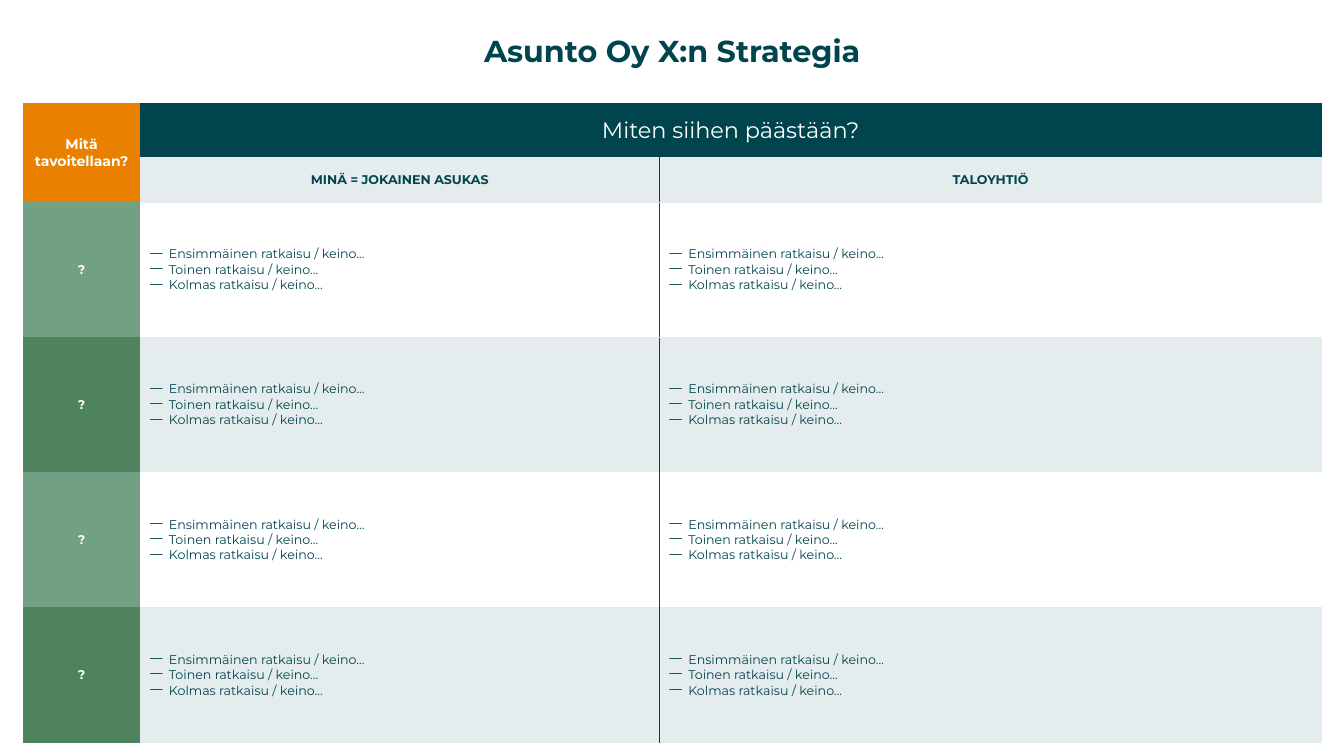
"""Build the housing company strategy slide with its goals and means table."""
from lxml.etree import SubElement
from pptx import Presentation
from pptx.dml.color import RGBColor
from pptx.enum.text import MSO_ANCHOR as Anchor, PP_ALIGN as Align
from pptx.oxml.ns import qn
from pptx.util import Pt

COLORS = {
    "petrol": "00454D",
    "orange": "E98000",
    "mist": "E5ECED",
    "white": "FFFFFF",
    "sage": "71A082",
    "forest": "4E835E",
}
MEANS = [
    "Ensimmäinen ratkaisu / keino…",
    "Toinen ratkaisu / keino…",
    "Kolmas ratkaisu / keino…",
]
COLUMN_WIDTHS = [83.5, 371, 473]
ROW_HEIGHTS = [39, 32] + [96.5] * 4
NO_GRID_STYLE = "{2D5ABB26-0587-4C30-8999-92F81FD0307C}"


def write(paragraph, text, size, color, bold=False):
    run = paragraph.add_run()
    run.text = text
    font_format = {"name": "Montserrat", "size": Pt(size), "bold": bold}
    for name, value in font_format.items():
        setattr(run.font, name, value)
    run.font.color.rgb = RGBColor.from_string(COLORS[color])


def style_cell(cell, fill, borders):
    properties = cell._tc.get_or_add_tcPr()
    for side in "LRTB":
        if side in borders:
            color, width = borders[side]
            line = SubElement(properties, qn(f"a:ln{side}"), w=str(Pt(width)))
            solid = SubElement(line, qn("a:solidFill"))
            SubElement(solid, qn("a:srgbClr"), val=COLORS[color])
    cell.fill.solid()
    cell.fill.fore_color.rgb = RGBColor.from_string(COLORS[fill])
    cell.vertical_anchor = Anchor.MIDDLE


presentation = Presentation()
presentation.slide_width = Pt(960)
presentation.slide_height = Pt(540)
slide = presentation.slides.add_slide(presentation.slide_layouts[5])

title = slide.shapes.title
title_box = {"left": 16.5, "top": 24.5, "width": 927.5, "height": 26.5}
for name, value in title_box.items():
    setattr(title, name, Pt(value))
title_format = {
    "margin_left": 0,
    "margin_right": 0,
    "margin_top": 0,
    "margin_bottom": 0,
    "vertical_anchor": Anchor.MIDDLE,
    "word_wrap": True,
}
for name, value in title_format.items():
    setattr(title.text_frame, name, value)
heading = title.text_frame.paragraphs[0]
heading.alignment = Align.CENTER
heading.line_spacing = 0.9
write(heading, "Asunto Oy X:n Strategia", 21.6, "petrol", True)

frame = slide.shapes.add_table(
    len(ROW_HEIGHTS), len(COLUMN_WIDTHS),
    Pt(16.5), Pt(73.5), Pt(sum(COLUMN_WIDTHS)), Pt(sum(ROW_HEIGHTS)),
)
table = frame.table
table.first_row = False
table.horz_banding = False
table._tbl.tblPr.find(qn("a:tableStyleId")).text = NO_GRID_STYLE
for column, width in zip(table.columns, COLUMN_WIDTHS):
    column.width = Pt(width)
for row, height in zip(table.rows, ROW_HEIGHTS):
    row.height = Pt(height)
table.cell(0, 0).merge(table.cell(1, 0))
table.cell(0, 1).merge(table.cell(0, 2))

divider = ("petrol", 0.5)
rule = ("mist", 0.75)
headers = [
    (0, 0, "Mitä tavoitellaan?", 10, "white", True, "orange", {}),
    (0, 1, "Miten siihen päästään?", 16, "white", False, "petrol", {"B": rule}),
    (1, 1, "MINÄ = JOKAINEN ASUKAS", 9, "petrol", True, "mist",
     {"R": divider, "T": rule, "B": rule}),
    (1, 2, "TALOYHTIÖ", 9, "petrol", True, "mist",
     {"L": divider, "T": rule, "B": rule}),
]
goals = [
    (row, 0, "?", 9, "white", True, "forest" if row % 2 else "sage", {})
    for row in range(2, len(ROW_HEIGHTS))
]
for row, column, text, size, color, bold, fill, borders in headers + goals:
    cell = table.cell(row, column)
    style_cell(cell, fill, borders)
    paragraph = cell.text_frame.paragraphs[0]
    paragraph.alignment = Align.CENTER
    write(paragraph, text, size, color, bold)

for row in range(2, len(ROW_HEIGHTS)):
    for column, side in ((1, "R"), (2, "L")):
        cell = table.cell(row, column)
        borders = {side: divider}
        if row == 2:
            borders["T"] = rule
        style_cell(cell, "mist" if row % 2 else "white", borders)
        for index, text in enumerate(MEANS):
            text_frame = cell.text_frame
            paragraph = text_frame.add_paragraph() if index else text_frame.paragraphs[0]
            properties = paragraph._p.get_or_add_pPr()
            properties.set("marL", str(Pt(13.5)))
            properties.set("indent", str(Pt(-13.5)))
            SubElement(properties, qn("a:buChar"), char="―")
            write(paragraph, text, 9, "petrol")

presentation.save("out.pptx")
